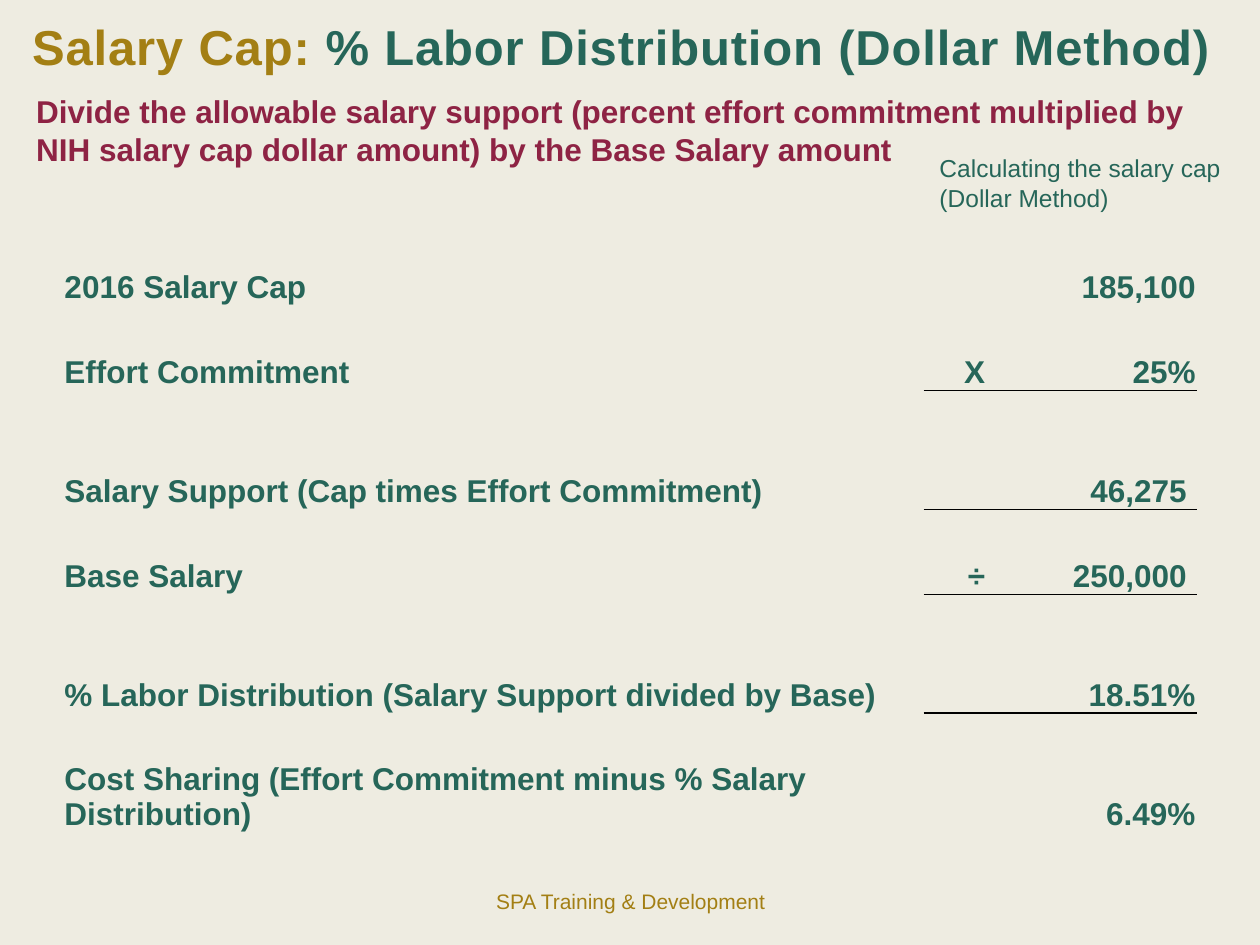
from dataclasses import dataclass

from lxml.etree import SubElement
from pptx import Presentation
from pptx.dml.color import RGBColor as RGB
from pptx.enum.text import MSO_ANCHOR as ANCHOR, MSO_AUTO_SIZE as AUTO, PP_ALIGN as ALIGN
from pptx.oxml.ns import qn
from pptx.util import Cm, Pt


@dataclass(frozen=True)
class Theme:
    font: str = "Arial"
    background: RGB = RGB.from_string("EEECE1")
    gold: RGB = RGB.from_string("A37F14")
    green: RGB = RGB.from_string("266659")
    wine: RGB = RGB.from_string("8E2344")
    rule: str = "000000"
    title: int = 28
    body: int = 18
    caption: int = 14
    footer: int = 12


T = Theme()

TITLE = [("Salary Cap: ", T.gold), ("% Labor Distribution (Dollar Method) ", T.green)]
TITLE_BOX = (0.2, 0.2, 24.94, 1.45)

TEXTS = [
    dict(text="SPA Training & Development", box=(8.69, 17.65, 8.05, 1.02),
         size=T.footer, color=T.gold, align=ALIGN.CENTER, anchor=ANCHOR.MIDDLE),
    dict(text="Divide the allowable salary support (percent effort commitment multiplied by "
              "NIH salary cap dollar amount) by the Base Salary amount",
         box=(0.48, 1.73, 24.69, 1.8), size=T.body, color=T.wine, bold=True),
    dict(text="Calculating the salary cap\n(Dollar Method)",
         box=(18.69, 2.97, 6.5, 1.45), size=T.caption, color=T.green),
]

SHORT, TALL = 1.71, 2.4
ROWS = [
    (SHORT, 0, "2016 Salary Cap", "", "185,100"),
    (SHORT, 1, "Effort Commitment", "X", "25%"),
    (TALL, 1, "Salary Support (Cap times Effort Commitment)", "", "46,275 "),
    (SHORT, 1, "Base Salary", "÷", "250,000 "),
    (TALL, 1.5, "% Labor Distribution (Salary Support divided by Base)", "", "18.51%"),
    (TALL, 0, "Cost Sharing (Effort Commitment minus % Salary Distribution)", "", "6.49%"),
]
COLUMNS = [17.35, 1.27, 4.24]
TABLE_LEFT, TABLE_TOP = 1.27, 4.45
CELL_INSET = 0.03
NO_GRID_STYLE = "{2D5ABB26-0587-4C30-8999-92F81FD0307C}"


def style(p, size, color=None, bold=False, align=ALIGN.LEFT):
    p.alignment = align
    p.font.name, p.font.size, p.font.bold = T.font, Pt(size), bold
    if color is not None:
        p.font.color.rgb = color


def add_box(s, box, anchor=ANCHOR.TOP, wrap=True):
    tf = s.shapes.add_textbox(*map(Cm, box)).text_frame
    tf.word_wrap = wrap
    tf.auto_size = AUTO.NONE if anchor == ANCHOR.MIDDLE else AUTO.SHAPE_TO_FIT_TEXT
    tf.vertical_anchor = anchor
    return tf


def add_title(s):
    p = add_box(s, TITLE_BOX, wrap=False).paragraphs[0]
    style(p, T.title, bold=True, align=ALIGN.CENTER)
    for text, color in TITLE:
        r = p.add_run()
        r.text = text
        r.font.color.rgb = color
        r.font._element.set("spc", "50")


def add_text(s, text, box, size, color, bold=False, align=ALIGN.LEFT, anchor=ANCHOR.TOP):
    p = add_box(s, box, anchor).paragraphs[0]
    p.text = text
    style(p, size, color, bold, align)


def underline(cell, width):
    tcPr = cell._tc.get_or_add_tcPr()
    ln = SubElement(tcPr, qn("a:lnB"), w=str(Pt(width)))
    fill = SubElement(ln, qn("a:solidFill"))
    SubElement(fill, qn("a:srgbClr"), val=T.rule)
    tcPr.insert(0, ln)


def add_table(s):
    heights = [row[0] for row in ROWS]
    box = (TABLE_LEFT, TABLE_TOP, sum(COLUMNS), sum(heights))
    table = s.shapes.add_table(len(ROWS), len(COLUMNS), *map(Cm, box)).table
    table.first_row = table.horz_banding = False
    table._tbl.tblPr.find(qn("a:tableStyleId")).text = NO_GRID_STYLE
    for column, width in zip(table.columns, COLUMNS):
        column.width = Cm(width)
    for i, (height, rule, *texts) in enumerate(ROWS):
        table.rows[i].height = Cm(height)
        for j, text in enumerate(texts):
            cell = table.cell(i, j)
            cell.fill.background()
            cell.vertical_anchor = ANCHOR.BOTTOM
            cell.margin_left = cell.margin_right = cell.margin_top = Cm(CELL_INSET)
            cell.margin_bottom = 0
            p = cell.text_frame.paragraphs[0]
            p.text = text
            style(p, T.body, T.green, True, ALIGN.RIGHT if j else ALIGN.LEFT)
            if rule and j:
                underline(cell, rule)


def main():
    prs = Presentation()
    prs.slide_width, prs.slide_height = Cm(25.4), Cm(19.05)
    s = prs.slides.add_slide(prs.slide_layouts[6])
    s.background.fill.solid()
    s.background.fill.fore_color.rgb = T.background
    add_title(s)
    for item in TEXTS:
        add_text(s, **item)
    add_table(s)
    prs.save("out.pptx")


if __name__ == "__main__":
    main()
